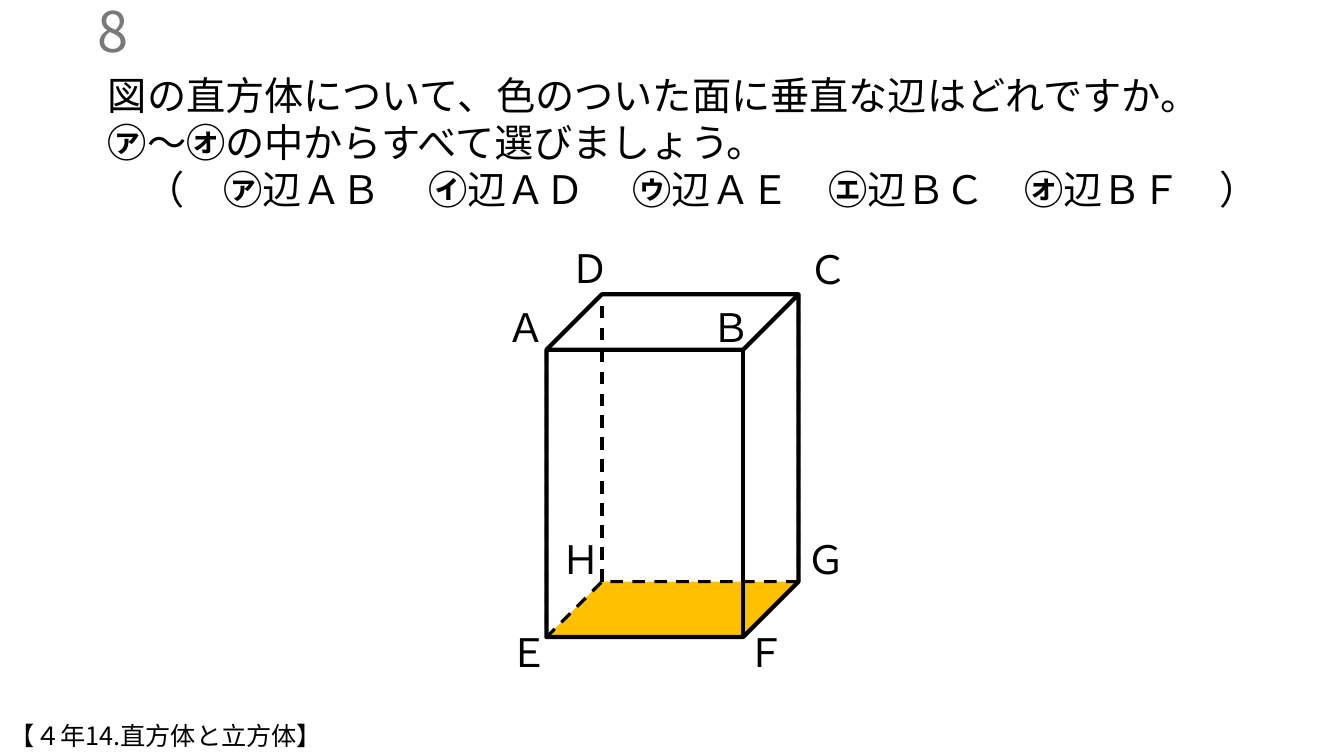
from itertools import groupby

from lxml import etree
from pptx import Presentation
from pptx import util as u
from pptx.dml.color import RGBColor
from pptx.enum import dml, shapes, text
from pptx.oxml.ns import qn

FONT = "Noto Sans CJK JP"
COLORS = {"ink": "000000", "number": "797979", "face": "FFC000"}
CIRCLED = "㋐㋑㋒㋓㋔"
QUESTION = [
    "図の直方体について、色のついた面に垂直な辺はどれですか。",
    "㋐〜㋔の中からすべて選びましょう。",
    "（　㋐辺ＡＢ　 ㋑辺ＡＤ　 ㋒辺ＡＥ　㋓辺ＢＣ　㋔辺ＢＦ　）",
]


def rgb(name):
    return RGBColor.from_string(COLORS[name])


def inches(box):
    return [u.Inches(length) for length in box]


def style_run(run, size, color="ink", bold=None):
    run.font.size = u.Pt(size)
    run.font.bold = bold
    run.font.color.rgb = rgb(color)
    run.font.name = FONT
    etree.SubElement(run.font._element, qn("a:ea"), typeface=FONT)


def add_text(slide, box, words, size, color="ink", wrap=True):
    label = slide.shapes.add_textbox(*inches(box))
    label.text_frame.word_wrap = wrap
    label.text_frame.text = words
    style_run(label.text_frame.paragraphs[0].runs[0], size, color)
    return label.text_frame


def add_question(slide, box):
    """Fill the title with the question, circled letters in bold."""
    title = slide.shapes.title
    title.left, title.top, title.width, title.height = inches(box)
    frame = title.text_frame
    frame.auto_size = text.MSO_AUTO_SIZE.NONE
    frame.vertical_anchor = text.MSO_ANCHOR.TOP
    for index, line in enumerate(QUESTION):
        paragraph = frame.add_paragraph() if index else frame.paragraphs[0]
        paragraph.alignment = text.PP_ALIGN.LEFT
        for circled, letters in groupby(line, lambda letter: letter in CIRCLED):
            run = paragraph.add_run()
            run.text = "".join(letters)
            style_run(run, 28, bold=circled)
    paragraph.alignment = text.PP_ALIGN.CENTER


def add_number(slide, box):
    frame = add_text(slide, box, "8", 40, "number")
    frame.vertical_anchor = text.MSO_ANCHOR.MIDDLE
    frame.paragraphs[0].alignment = text.PP_ALIGN.RIGHT


def add_solid(slide, box, depth):
    """Draw the cuboid ABCD-EFGH with its coloured base and vertex labels."""
    left, top, width, height = box
    base = slide.shapes.add_shape(
        shapes.MSO_SHAPE.PARALLELOGRAM,
        *inches((left, top + height - depth, width, depth)))
    base.adjustments[0] = 0.995
    base.shadow.inherit = False
    base.fill.solid()
    base.fill.fore_color.rgb = rgb("face")
    base.line.fill.background()

    for rotation, weight, dash in ((0, 3, None),
                                   (180, 2.25, dml.MSO_LINE.DASH)):
        edges = slide.shapes.add_shape(shapes.MSO_SHAPE.CUBE, *inches(box))
        edges.adjustments[0] = depth / width
        edges.rotation = rotation
        edges.shadow.inherit = False
        edges.fill.background()
        edges.line.color.rgb = rgb("ink")
        edges.line.width = u.Pt(weight)
        edges.line.dash_style = dash

    front, back = left, left + depth
    front_right, back_right = left + width - depth, left + width
    bottom = top + height
    vertices = {
        "Ａ": (front, top + depth, -0.49, -0.51),
        "Ｂ": (front_right, top + depth, -0.41, -0.51),
        "Ｃ": (back_right, top, 0, -0.54),
        "Ｄ": (back, top, -0.41, -0.55),
        "Ｅ": (front, bottom, -0.47, -0.14),
        "Ｆ": (front_right, bottom, -0.06, -0.14),
        "Ｇ": (back_right, bottom - depth, -0.02, -0.51),
        "Ｈ": (back, bottom - depth, -0.5, -0.51),
    }
    for letter, (x, y, shift_x, shift_y) in vertices.items():
        add_text(slide, (x + shift_x, y + shift_y, 0.59, 0.57), letter, 28,
                 wrap=False)


def main():
    prs = Presentation()
    prs.slide_width, prs.slide_height = inches((13.33, 7.5))
    slide = prs.slides.add_slide(prs.slide_layouts[5])
    add_question(slide, (0.97, 0.66, 11.99, 1.51))
    add_number(slide, (-1.63, 0.1, 3, 0.4))
    add_solid(slide, (5.42, 2.92, 2.5, 3.4), depth=0.55)
    add_text(slide, (0, 7.1, 7.49, 0.4), "【４年14.直方体と立方体】", 18)
    prs.save("out.pptx")


if __name__ == "__main__":
    main()
